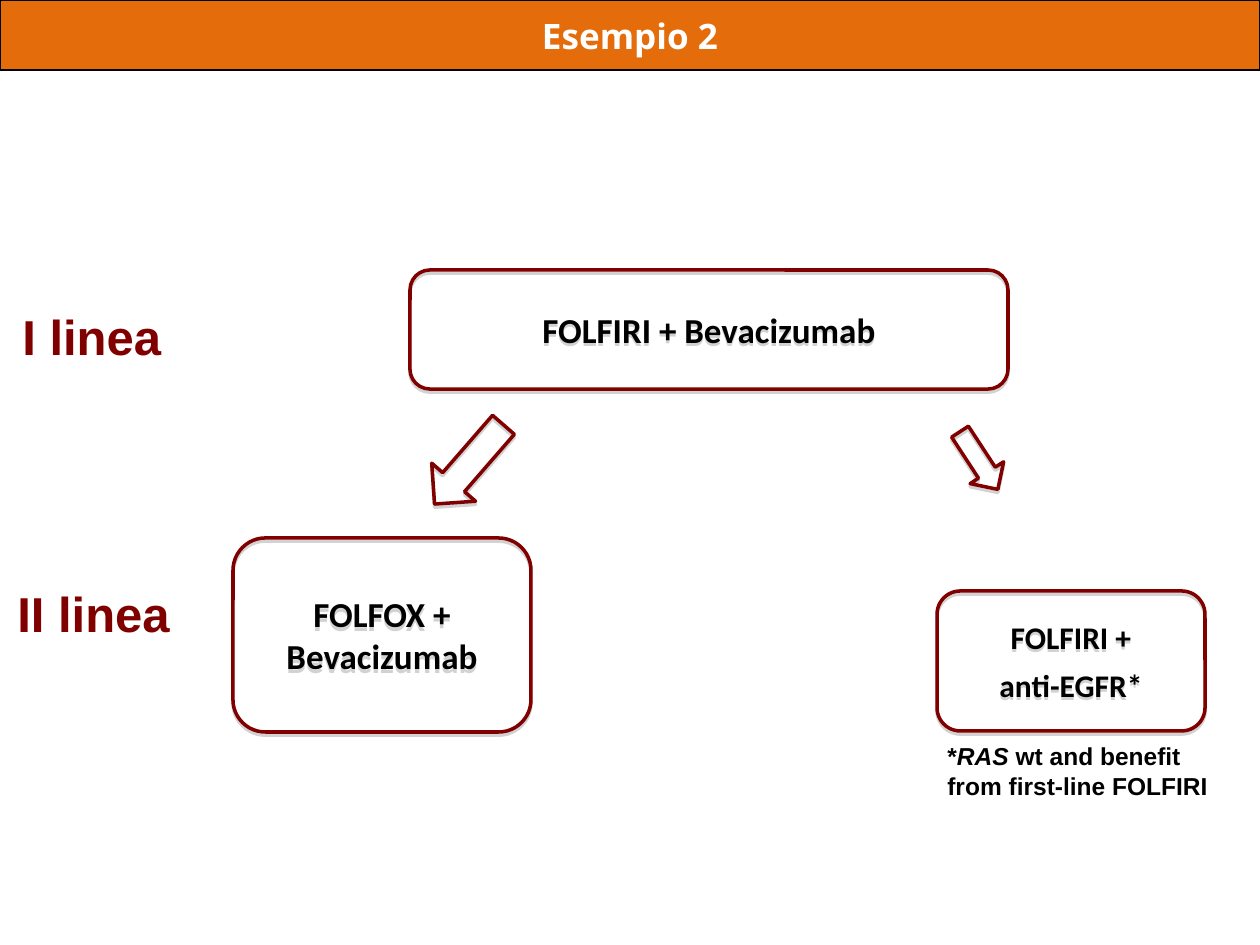
from lxml import etree
from pptx import Presentation
from pptx.dml.color import RGBColor
from pptx.enum.shapes import MSO_SHAPE
from pptx.enum.text import MSO_ANCHOR, MSO_AUTO_SIZE, PP_ALIGN
from pptx.oxml.ns import qn
from pptx.util import Pt

PX = 914400 / 126
ROUND_RECT, DOWN_ARROW = MSO_SHAPE.ROUNDED_RECTANGLE, MSO_SHAPE.DOWN_ARROW
LEFT, CENTER = PP_ALIGN.LEFT, PP_ALIGN.CENTER
TOP, MIDDLE = MSO_ANCHOR.TOP, MSO_ANCHOR.MIDDLE
NO_FIT = MSO_AUTO_SIZE.NONE

DARK_RED = RGBColor(0x80, 0x00, 0x00)
ORANGE = RGBColor(0xE4, 0x6C, 0x0A)
BLACK = RGBColor(0x00, 0x00, 0x00)
WHITE = RGBColor(0xFF, 0xFF, 0xFF)
SHADOW = "808080"


def px(*values):
    return [round(v * PX) for v in values]


def write(sp, paragraphs, size=20, font="Calibri", color=BLACK, align=CENTER,
          anchor=MIDDLE, wrap=True, after=0):
    """Fill a shape with bold paragraphs, each a list of (text, italic) runs."""
    tf = sp.text_frame
    tf.word_wrap = wrap
    tf.auto_size = NO_FIT
    tf.vertical_anchor = anchor
    for i, runs in enumerate(paragraphs):
        p = tf.add_paragraph() if i else tf.paragraphs[0]
        p.alignment = align
        p.space_after = Pt(after)
        for text, italic in runs:
            r = p.add_run()
            r.text = text
            r.font.name, r.font.size = font, Pt(size)
            r.font.bold, r.font.italic = True, italic
            r.font.color.rgb = color


def add_drop_shadow(sp):
    sp.shadow.inherit = False
    effects = sp._element.spPr.find(qn("a:effectLst"))
    shadow = etree.SubElement(effects, qn("a:outerShdw"), blurRad="0",
                              dist=str(Pt(1.8)), dir="5400000", rotWithShape="0")
    color = etree.SubElement(shadow, qn("a:srgbClr"), val=SHADOW)
    etree.SubElement(color, qn("a:alpha"), val="35000")


def add_outline(slide, kind, box, rotation=0):
    sp = slide.shapes.add_shape(kind, *px(*box))
    sp.rotation = rotation
    sp.fill.background()
    sp.line.color.rgb = DARK_RED
    sp.line.width = Pt(2)
    add_drop_shadow(sp)
    return sp


def add_therapy(slide, box, lines, **style):
    sp = add_outline(slide, ROUND_RECT, box)
    write(sp, [[(line, False)] for line in lines], **style)


def add_text(slide, box, runs, **style):
    sp = slide.shapes.add_textbox(*px(*box))
    write(sp, [runs], font="Arial", align=LEFT, anchor=TOP, **style)


def set_title(slide, text):
    sp = slide.shapes.title
    sp.left, sp.top, sp.width, sp.height = px(0, 0, 1260, 70)
    sp.fill.solid()
    sp.fill.fore_color.rgb = ORANGE
    sp.line.color.rgb = BLACK
    sp.line.width = Pt(0.75)
    write(sp, [[(text, False)]], font="Open Sans", color=WHITE)


def main():
    prs = Presentation()
    prs.slide_width, prs.slide_height = px(1260, 945)
    slide = prs.slides.add_slide(prs.slide_layouts[5])
    set_title(slide, "Esempio 2")

    # Therapies
    add_therapy(slide, (410, 270, 598, 119), ["FOLFIRI + Bevacizumab"])
    add_therapy(slide, (233, 538, 298, 194), ["FOLFOX + Bevacizumab"])
    add_therapy(slide, (937, 591, 268, 140), ["FOLFIRI +", "anti-EGFR*"],
                size=18, after=6)

    # Arrows from first to second line
    add_outline(slide, DOWN_ARROW, (440, 412, 58, 105), rotation=41)
    add_outline(slide, DOWN_ARROW, (959, 426, 40, 69), rotation=326.8)

    # Footnote on the anti-EGFR option
    add_text(slide, (935, 735, 291, 72),
             [("*", False), ("RAS", True),
              (" wt and benefit from first-line FOLFIRI", False)], size=14)

    # Line labels
    for box, label in (((10, 300, 176, 72), "I linea"),
                       ((5, 577, 183, 72), "II linea")):
        add_text(slide, box, [(label, False)], size=28, color=DARK_RED, wrap=False)

    prs.save("out.pptx")


if __name__ == "__main__":
    main()
